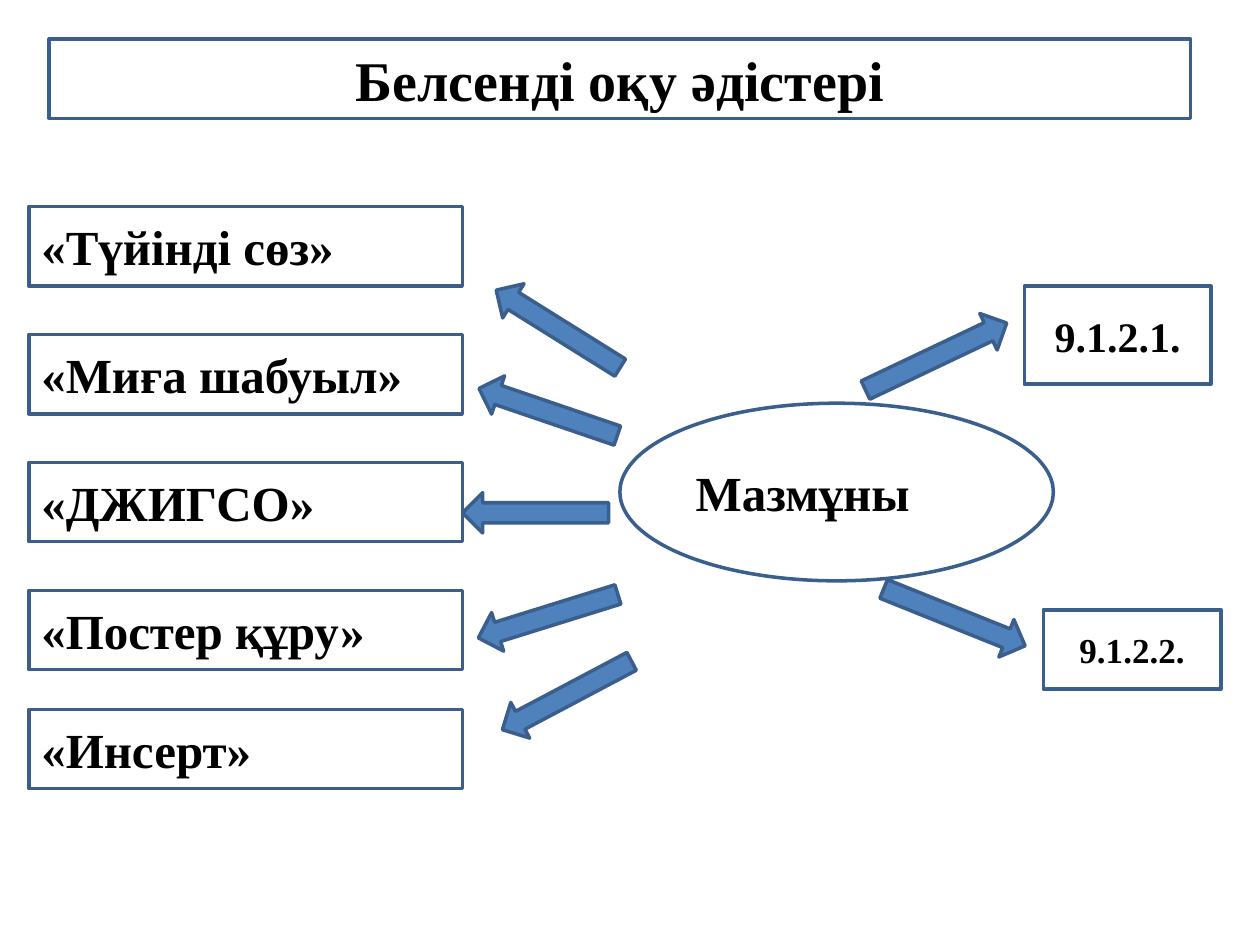
from pptx import Presentation
from pptx.dml.color import RGBColor
from pptx.enum.shapes import MSO_SHAPE as Form
from pptx.enum.text import MSO_ANCHOR as Anchor, MSO_AUTO_SIZE as Fit, PP_ALIGN as Align
from pptx.util import Inches, Pt

FONT = {"name": "Times New Roman", "bold": True}
WHITE, BLUE, EDGE, BLACK = "FFFFFF", "4F81BD", "3A5F8C", "000000"
METHODS = ["«Түйінді сөз»", "«Миға шабуыл»", "«ДЖИГСО»", "«Постер құру»", "«Инсерт»"]


def tint(part, code):
    """Give a fill, line or font the colour of a hex string."""
    if hasattr(part, "solid"):
        part.solid()
        part = part.fore_color
    else:
        part = part.color
    part.rgb = RGBColor.from_string(code)


def put(item, values):
    """Set the attributes of an item from a dict."""
    for key, value in values.items():
        setattr(item, key, value)


def paint(shape, fill):
    """Give a shape its fill and outline."""
    tint(shape.fill, fill)
    tint(shape.line, EDGE)
    shape.line.width = Pt(2)


def write(shape, text, size, align):
    """Write one bold line in a shape."""
    frame = shape.text_frame
    put(frame, {"word_wrap": True, "auto_size": Fit.NONE, "vertical_anchor": Anchor.MIDDLE})
    line = frame.paragraphs[0]
    line.alignment = align
    run = line.add_run()
    run.text = text
    put(run.font, {**FONT, "size": Pt(size)})
    tint(run.font, BLACK)


def draw(slide, form, box, fill=WHITE):
    """Add a flat preset shape in a box given in inches."""
    shape = slide.shapes.add_shape(form, *map(Inches, box))
    shape.shadow.inherit = False
    paint(shape, fill)
    return shape


def head(slide, box):
    """Place the framed title."""
    title = slide.shapes.title
    put(title, dict(zip(("left", "top", "width", "height"), map(Inches, box))))
    paint(title, WHITE)
    write(title, "Белсенді оқу әдістері", 32, Align.CENTER)


def hub(slide, box):
    """Place the oval in the middle."""
    write(draw(slide, Form.OVAL, box), "Мазмұны", 28, Align.LEFT)


def methods(slide, box):
    """Stack the method boxes, the last one set closer."""
    left, top, wide, high = box
    tall, step, close = 0.63, 1.015, 0.08
    last = len(METHODS) - 1
    for i, name in enumerate(METHODS):
        y = top + high - tall if i == last else top + i * step
        write(draw(slide, Form.RECTANGLE, (left, y, wide, tall)), name, 28, Align.LEFT)


def goals(slide, box):
    """Place the two goal codes at the top and foot of the box."""
    left, top, wide, high = box
    write(draw(slide, Form.RECTANGLE, (left, top, 1.48, 0.78)), "9.1.2.1.", 24, Align.CENTER)
    low = (left + wide - 1.41, top + high - 0.63, 1.41, 0.63)
    write(draw(slide, Form.RECTANGLE, low), "9.1.2.2.", 20, Align.CENTER)


def arrows(slide, box, marks):
    """Place turned arrows at offsets from the corner of the box."""
    left, top = box[:2]
    for x, y, wide, turn in marks:
        place = (left + x, top + y, wide, 0.32)
        draw(slide, Form.RIGHT_ARROW, place, BLUE).rotation = turn


def main():
    """Build and save the slide."""
    deck = Presentation()
    put(deck, {"slide_width": Inches(10), "slide_height": Inches(7.5)})
    slide = deck.slides.add_slide(deck.slide_layouts[5])
    head(slide, (0.39, 0.31, 9.06, 0.63))
    hub(slide, (4.92, 3.2, 3.44, 1.41))
    methods(slide, (0.23, 1.64, 3.44, 4.62))
    goals(slide, (8.13, 2.27, 1.56, 3.2))
    arrows(slide, (3.67, 2.45, 1.41, 3.23), [
        (0.18, 0, 1.16, 212), (0.1, 0.66, 1.16, 198.8), (0, 1.46, 1.16, 180),
        (0.1, 2.28, 1.16, 162.7), (0.25, 2.91, 1.16, 152.1)])
    arrows(slide, (6.81, 2.67, 1.37, 2.39), [
        (0, 0, 1.24, 334.6), (0.16, 2.07, 1.21, 21.9)])
    deck.save("out.pptx")


if __name__ == "__main__":
    main()
